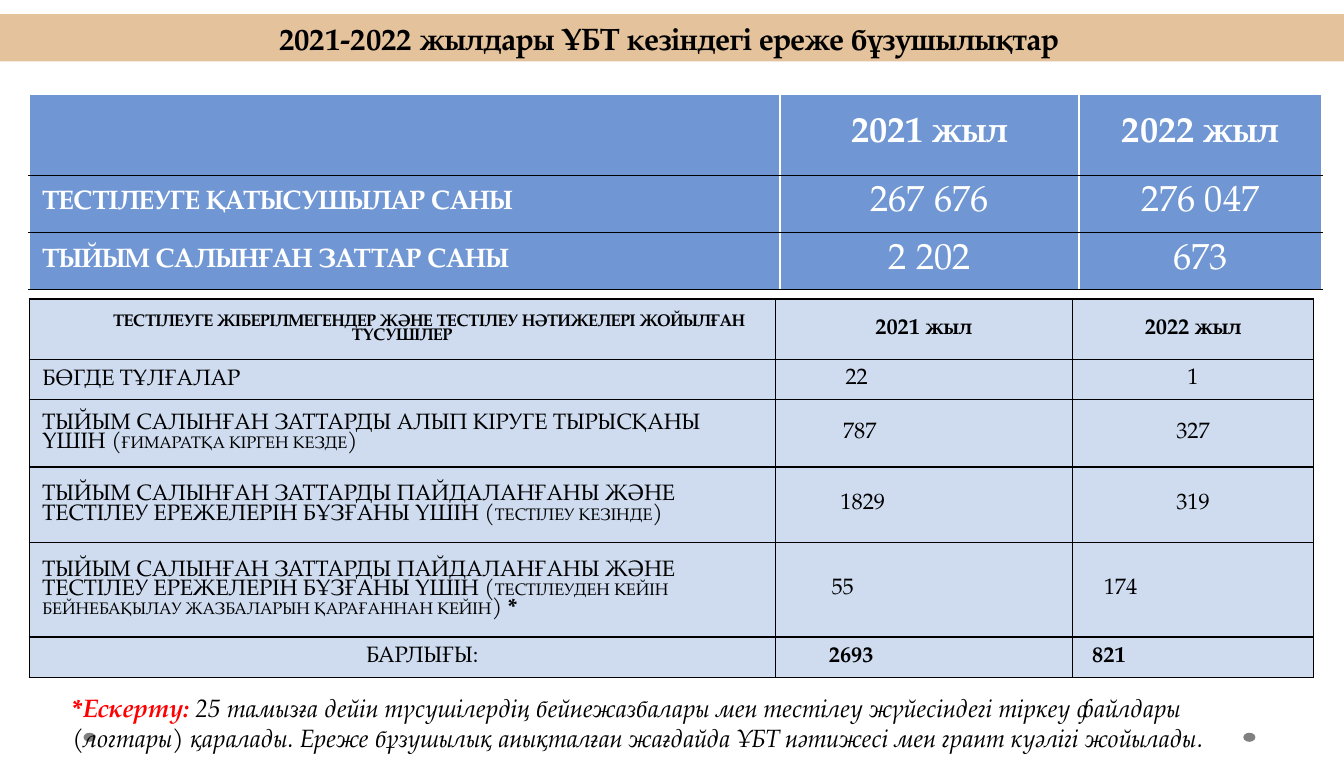
from dataclasses import dataclass
from lxml.etree import SubElement
from pptx import Presentation
from pptx.dml.color import RGBColor
from pptx.enum.shapes import MSO_SHAPE as Shape
from pptx.enum.text import MSO_ANCHOR as Anchor, MSO_AUTO_SIZE as AutoSize, PP_ALIGN as Align
from pptx.oxml.ns import qn
from pptx.util import Inches, Pt


@dataclass(frozen=True)
class Theme:
    font: str = "TeX Gyre Pagella"
    black: str = "000000"
    white: str = "FFFFFF"
    red: str = "FF0000"
    band: str = "E4C29C"
    dot: str = "808080"
    totals_fill: str = "7097D3"
    violations_fill: str = "CFDCF0"
    title: int = 22
    totals: int = 26
    totals_label: int = 19
    violations: int = 16
    detail: int = 12
    note: int = 18


THEME = Theme()

TITLE = "2021-2022 жылдары ҰБТ кезіндегі ереже бұзушылықтар"
YEARS = ("2021 жыл", "2022 жыл")

TOTALS = [
    ("", *YEARS),
    ("ТЕСТІЛЕУГЕ ҚАТЫСУШЫЛАР САНЫ", "267 676", "276 047"),
    ("ТЫЙЫМ САЛЫНҒАН ЗАТТАР САНЫ", "2 202", "673"),
]
TOTALS_COLUMNS = (7.46, 2.97, 2.41)
TOTALS_ROWS = (0.81, 0.57, 0.57)

USE_OF_ITEMS = "ТЫЙЫМ САЛЫНҒАН ЗАТТАРДЫ ПАЙДАЛАНҒАНЫ ЖӘНЕ ТЕСТІЛЕУ ЕРЕЖЕЛЕРІН БҰЗҒАНЫ ҮШІН"
VIOLATIONS_HEADING = "ТЕСТІЛЕУГЕ ЖІБЕРІЛМЕГЕНДЕР ЖӘНЕ ТЕСТІЛЕУ НӘТИЖЕЛЕРІ ЖОЙЫЛҒАН ТҮСУШІЛЕР"
# label, detail in brackets, footnote mark, values, extra right margin of each value
VIOLATIONS = [
    ("БӨГДЕ ТҰЛҒАЛАР", "", "", ("22", "1"), (1.33, 0)),
    ("ТЫЙЫМ САЛЫНҒАН ЗАТТАРДЫ АЛЫП КІРУГЕ ТЫРЫСҚАНЫ ҮШІН",
     "ҒИМАРАТҚА КІРГЕН КЕЗДЕ", "", ("787", "327"), (1.27, 0)),
    (USE_OF_ITEMS, "ТЕСТІЛЕУ КЕЗІНДЕ", "", ("1829", "319"), (1.21, 0)),
    (USE_OF_ITEMS, "ТЕСТІЛЕУДЕН КЕЙІН БЕЙНЕБАҚЫЛАУ ЖАЗБАЛАРЫН ҚАРАҒАННАН КЕЙІН",
     " *", ("55", "174"), (1.61, 1.44)),
]
SUM_ROW = ("БАРЛЫҒЫ:", ("2693", "821"), (1.44, 1.67))
VIOLATIONS_COLUMNS = (7.41, 2.95, 2.4)
VIOLATIONS_ROWS = (0.6, 0.4, 0.67, 0.75, 0.94, 0.4)

NOTE_MARK = "*Ескерту: "
NOTE = ("25 тамызға дейін түсушілердің бейнежазбалары мен тестілеу жүйесіндегі тіркеу файлдары "
        "(логтары) қаралады. Ереже бұзушылық анықталған жағдайда ҰБТ нәтижесі мен грант куәлігі "
        "жойылады.")


def add_run(paragraph, text, size, color, bold=False, italic=False):
    run = paragraph.add_run()
    run.text = text
    values = {"name": THEME.font, "size": Pt(size), "bold": bold, "italic": italic}
    for name, value in values.items():
        setattr(run.font, name, value)
    run.font.color.rgb = RGBColor.from_string(color)


def add_plain_shape(slide, kind, box, color):
    shape = slide.shapes.add_shape(kind, *map(Inches, box))
    shape.shadow.inherit = False
    shape.fill.solid()
    shape.fill.fore_color.rgb = RGBColor.from_string(color)
    shape.line.fill.background()
    return shape


def add_plain_table(slide, left, top, columns, rows):
    frame = slide.shapes.add_table(len(rows), len(columns), Inches(left), Inches(top),
                                   Inches(sum(columns)), Inches(sum(rows)))
    table = frame.table
    table.first_row = table.horz_banding = False
    for column, width in zip(table.columns, columns):
        column.width = Inches(width)
    for row, height in zip(table.rows, rows):
        row.height = Inches(height)
    return table


def format_cell(cell, fill, borders, align=Align.CENTER, extra_left=0, extra_right=0):
    """Format the cell and return its paragraph; borders maps a side to (colour, points)."""
    values = {
        "margin_left": Inches(0.13 + extra_left), "margin_right": Inches(0.13 + extra_right),
        "margin_top": Inches(0.07), "margin_bottom": Inches(0.07),
        "vertical_anchor": Anchor.MIDDLE,
    }
    for name, value in values.items():
        setattr(cell, name, value)
    properties = cell._tc.get_or_add_tcPr()
    for side in "LRTB":
        color, width = borders[side]
        line = SubElement(properties, qn(f"a:ln{side}"), w=str(Pt(width)))
        SubElement(SubElement(line, qn("a:solidFill")), qn("a:srgbClr"), val=color)
    cell.fill.solid()
    cell.fill.fore_color.rgb = RGBColor.from_string(fill)
    paragraph = cell.text_frame.paragraphs[0]
    paragraph.alignment = align
    return paragraph


def add_totals(slide):
    table = add_plain_table(slide, 0.29, 0.93, TOTALS_COLUMNS, TOTALS_ROWS)
    white, black = (THEME.white, 1.5), (THEME.black, 1)
    for row, texts in enumerate(TOTALS):
        borders = {"L": white, "R": white, "T": black if row else white, "B": black}
        for column, text in enumerate(texts):
            align = Align.CENTER if column else Align.LEFT
            paragraph = format_cell(table.cell(row, column), THEME.totals_fill, borders, align)
            if text:
                size = THEME.totals if column else THEME.totals_label
                add_run(paragraph, text, size, THEME.white, bold=row == 0 or column == 0)


def add_violations(slide):
    table = add_plain_table(slide, 0.29, 2.97, VIOLATIONS_COLUMNS, VIOLATIONS_ROWS)
    borders = dict.fromkeys("LRTB", (THEME.black, 1))
    last = len(VIOLATIONS) + 1

    def start_cell(row, column, **layout):
        return format_cell(table.cell(row, column), THEME.violations_fill, borders, **layout)

    def write(paragraph, text, size=THEME.violations, bold=False):
        add_run(paragraph, text, size, THEME.black, bold)

    def write_values(row, values, extras, bold=False):
        for column, (value, extra) in enumerate(zip(values, extras), start=1):
            write(start_cell(row, column, extra_right=extra), value, bold=bold)

    heading = start_cell(0, 0)
    heading.line_spacing = 0.85
    heading._p.get_or_add_pPr().set("indent", str(Inches(0.54)))
    write(heading, VIOLATIONS_HEADING, THEME.detail, bold=True)
    write_values(0, YEARS, (0, 0), bold=True)

    for row, (label, detail, mark, values, extras) in enumerate(VIOLATIONS, start=1):
        paragraph = start_cell(row, 0, align=Align.LEFT)
        paragraph.line_spacing = 0.85
        write(paragraph, f"{label} (" if detail else label)
        if detail:
            write(paragraph, detail, THEME.detail)
            write(paragraph, ")")
        if mark:
            write(paragraph, mark, bold=True)
        write_values(row, values, extras)

    label, values, extras = SUM_ROW
    write(start_cell(last, 0, extra_left=0.4), label)
    write_values(last, values, extras, bold=True)


def add_title(slide):
    band = add_plain_shape(slide, Shape.RECTANGLE, (0, 0.14, 13.35, 0.47), THEME.band)
    title = slide.shapes.title
    band.element.addnext(title.element)
    box = dict(left=0.41, top=0.14, width=12.47, height=0.47)
    for name, value in box.items():
        setattr(title, name, Inches(value))
    title.text_frame.auto_size = AutoSize.NONE
    paragraph = title.text_frame.paragraphs[0]
    paragraph.alignment = Align.CENTER
    add_run(paragraph, TITLE, THEME.title, THEME.black, bold=True)


def add_note(slide):
    box = slide.shapes.add_textbox(*map(Inches, (0.62, 6.83, 12.1, 0.71)))
    box.text_frame.word_wrap = True
    paragraph = box.text_frame.paragraphs[0]
    add_run(paragraph, NOTE_MARK, THEME.note, THEME.red, bold=True, italic=True)
    add_run(paragraph, NOTE, THEME.note, THEME.black, italic=True)


def main():
    presentation = Presentation()
    presentation.slide_width, presentation.slide_height = Inches(13.35), Inches(7.68)
    slide = presentation.slides.add_slide(presentation.slide_layouts[5])
    for left in (12.35, 0.83):
        add_plain_shape(slide, Shape.OVAL, (left, 7.28, 0.12, 0.09), THEME.dot)
    add_totals(slide)
    add_title(slide)
    add_violations(slide)
    add_note(slide)
    presentation.save("out.pptx")


if __name__ == "__main__":
    main()
